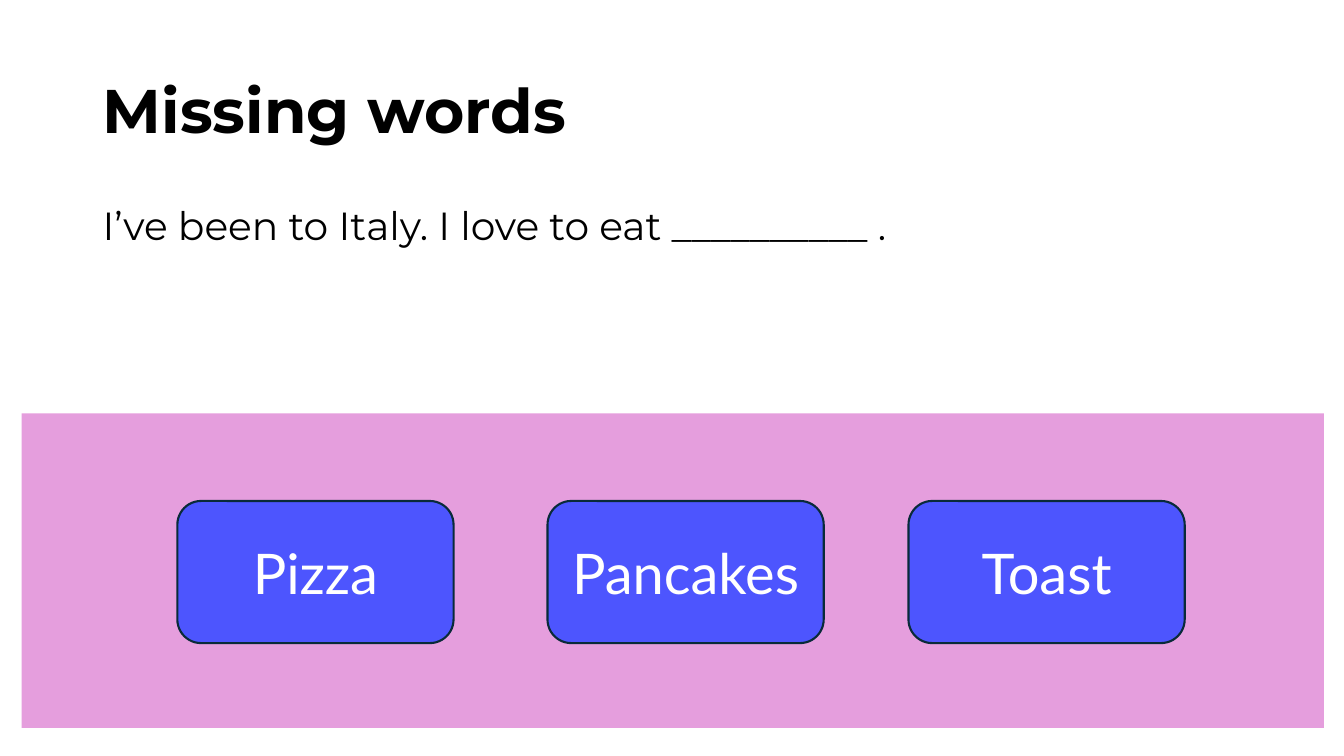
from pptx import Presentation
from pptx.dml.color import RGBColor
from pptx.enum.shapes import MSO_SHAPE
from pptx.enum.text import MSO_ANCHOR, MSO_AUTO_SIZE, PP_ALIGN
from pptx.util import Inches, Pt

RECT, ROUNDED = MSO_SHAPE.RECTANGLE, MSO_SHAPE.ROUNDED_RECTANGLE
TOP, MIDDLE = MSO_ANCHOR.TOP, MSO_ANCHOR.MIDDLE
LEFT, CENTER = PP_ALIGN.LEFT, PP_ALIGN.CENTER
NO_AUTOFIT = MSO_AUTO_SIZE.NONE
TITLE_ONLY = 5


def rgb(hex_colour):
    return RGBColor.from_string(hex_colour)


class Deck:
    """Style and current slide; boxes are percentages of the slide's size."""
    text_font, button_font = "Montserrat", "Lato"
    ink, white = "000000", "FFFFFF"
    pink, blue, outline = "E59EDD", "4D55FE", "092A39"

    def __init__(self, width, height):
        self.prs = Presentation()
        self.prs.slide_width, self.prs.slide_height = Inches(width), Inches(height)
        self.s = self.prs.slides.add_slide(self.prs.slide_layouts[TITLE_ONLY])

    def place(self, box):
        x, y, w, h = box
        sw, sh = self.prs.slide_width, self.prs.slide_height
        return [round(v * size / 100) for v, size in
                ((x, sw), (y, sh), (w, sw), (h, sh))]

    def set_text(self, sp, text, size, font, colour, align=LEFT, anchor=TOP,
                 bold=False, spacing=0.9):
        tf = sp.text_frame
        tf.word_wrap = True
        tf.auto_size = NO_AUTOFIT
        tf.vertical_anchor = anchor
        p = tf.paragraphs[0]
        p.text = text
        p.alignment, p.line_spacing = align, spacing
        p.font.size, p.font.name, p.font.bold = Pt(size), font, bold
        p.font.color.rgb = rgb(colour)

    def title(self, text, box):
        sp = self.s.shapes.title
        sp.left, sp.top, sp.width, sp.height = self.place(box)
        self.set_text(sp, text, 44, self.text_font, self.ink, anchor=MIDDLE, bold=True)

    def text(self, text, box):
        sp = self.s.shapes.add_textbox(*self.place(box))
        self.set_text(sp, text, 28, self.text_font, self.ink)

    def shape(self, kind, box, fill, line=None):
        sp = self.s.shapes.add_shape(kind, *self.place(box))
        sp.shadow.inherit = False
        sp.fill.solid()
        sp.fill.fore_color.rgb = rgb(fill)
        if line:
            sp.line.color.rgb = rgb(line)
            sp.line.width = Pt(1.5)
        else:
            sp.line.fill.background()
        return sp

    def button(self, text, box):
        sp = self.shape(ROUNDED, box, self.blue, self.outline)
        self.set_text(sp, text, 40, self.button_font, self.white,
                      align=CENTER, anchor=MIDDLE, spacing=1.0)


def main():
    deck = Deck(13.33, 7.5)

    # Heading and sentence
    margin, content = 6.9, 86.27
    deck.title("Missing words", (margin, 5.33, content, 19.33))
    deck.text("I’ve been to Italy. I love to eat __________ .",
              (margin, 26.67, content, 27))

    # Answer band with three choices
    deck.shape(RECT, (1.6, 54.67, 96.9, 41.6), deck.pink)
    for word, left in (("Pizza", 13.2), ("Pancakes", 40.74), ("Toast", 67.6)):
        deck.button(word, (left, 66.27, 20.55, 18.8))

    deck.prs.save("out.pptx")


if __name__ == "__main__":
    main()
